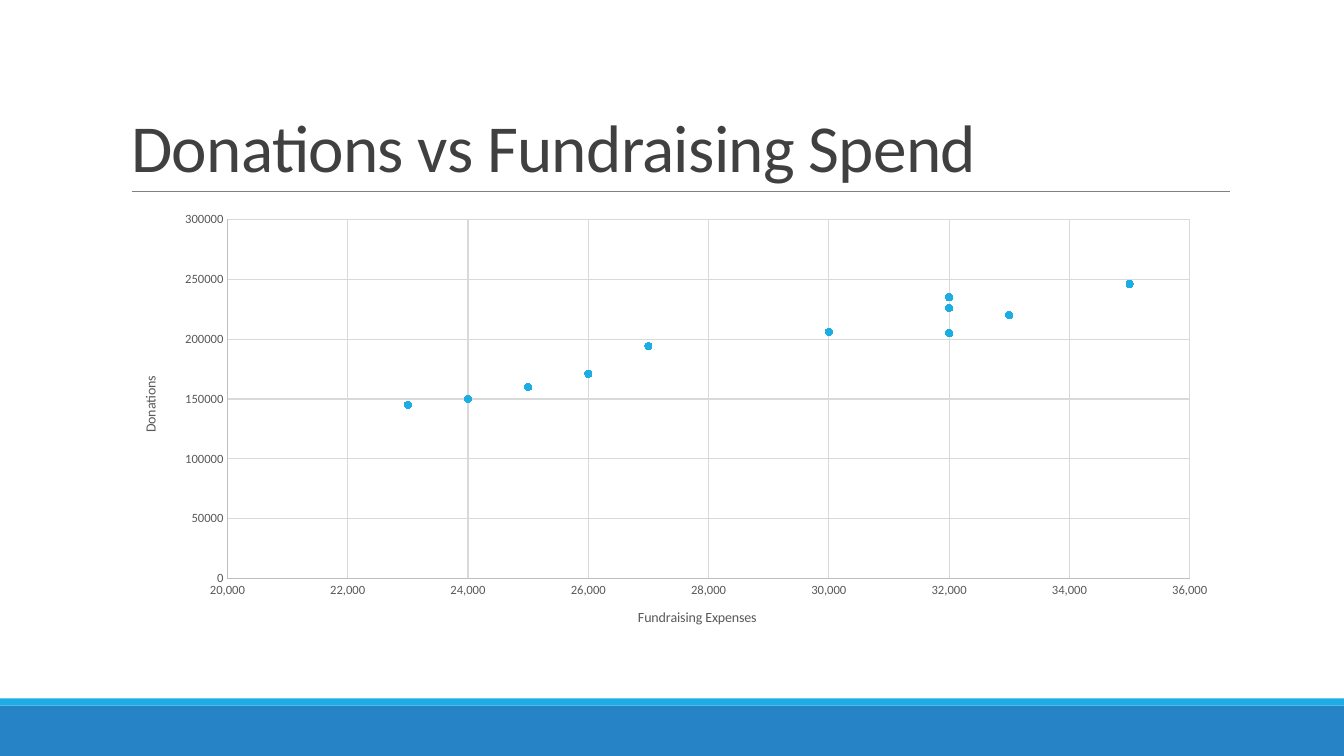
from lxml import etree
from pptx import Presentation
from pptx import util as u
from pptx.chart import data
from pptx.dml.color import RGBColor
from pptx.enum import chart as ch, shapes, text
from pptx.oxml import parse_xml
from pptx.oxml.ns import nsdecls, qn

COLORS = {
    "band": "2683C6", "accent": "1CADE4", "rule": "808080", "title": "404040",
    "label": "595959", "axis": "BFBFBF", "grid": "D9D9D9",
}
FONT = "Calibri"
SPEND_AND_DONATIONS = [
    (33000, 220000), (25000, 160000), (30000, 206000), (23000, 145000),
    (35000, 246000), (24000, 150000), (32000, 226000), (26000, 171000),
    (32000, 235000), (32000, 205000), (27000, 194000),
]


def color(name):
    return RGBColor.from_string(COLORS[name])


def style_font(font, size, tint):
    font.name, font.size, font.bold = FONT, u.Pt(size), False
    font.color.rgb = color(tint)


def write(frame, words, size, tint, leading=None, tracking=None):
    paragraph = frame.paragraphs[0]
    if leading:
        paragraph.line_spacing = leading
    run = paragraph.add_run()
    run.text = words
    style_font(run.font, size, tint)
    if tracking:
        run.font._element.set("spc", str(tracking))


def percent_layout(**percents):
    inner = '<c:layoutTarget val="inner"/>' if "w" in percents else ""
    modes = "".join(f'<c:{key}Mode val="edge"/>' for key in ("x", "y"))
    values = "".join(f'<c:{key} val="{value / 100:.4f}"/>' for key, value in percents.items())
    return parse_xml(f'<c:layout {nsdecls("c")}><c:manualLayout>'
                     f'{inner}{modes}{values}</c:manualLayout></c:layout>')


def drop_layout(element):
    for layout in element.findall(qn("c:layout")):
        element.remove(layout)


class SlideBuilder:
    def __init__(self, slide):
        self.slide = slide

    def band(self, left, top, width, height, tint):
        bar = self.slide.shapes.add_shape(
            shapes.MSO_SHAPE.RECTANGLE, u.Cm(left), u.Cm(top), u.Cm(width), u.Cm(height))
        bar.shadow.inherit = False
        bar.fill.solid()
        bar.fill.fore_color.rgb = color(tint)
        bar.line.fill.background()

    def rule(self, left, right, top):
        line = self.slide.shapes.add_connector(
            shapes.MSO_CONNECTOR.STRAIGHT, u.Cm(left), u.Cm(top), u.Cm(right), u.Cm(top))
        line.line.color.rgb = color("rule")
        line.line.width = u.Pt(0.5)
        etree.SubElement(line._element.spPr, qn("a:effectLst"))

    def title(self, words, left, top, width, height):
        box = self.slide.shapes.add_textbox(u.Cm(left), u.Cm(top), u.Cm(width), u.Cm(height))
        box.text_frame.word_wrap = True
        box.text_frame.vertical_anchor = text.MSO_ANCHOR.BOTTOM
        write(box.text_frame, words, 48, "title", leading=0.85, tracking=-50)

    def axis(self, axis, words, low, high, step, number_format, x, y):
        axis.minimum_scale, axis.maximum_scale, axis.major_unit = low, high, step
        axis.has_major_gridlines = True
        axis.major_tick_mark = axis.minor_tick_mark = ch.XL_TICK_MARK.NONE
        style_font(axis.tick_labels.font, 9, "label")
        axis.tick_labels.number_format = number_format
        axis.tick_labels.number_format_is_linked = False
        for line, tint in ((axis.format.line, "axis"),
                           (axis.major_gridlines.format.line, "grid")):
            line.color.rgb = color(tint)
            line.width = u.Pt(0.75)
        write(axis.axis_title.text_frame, words, 10, "label")
        title = axis.axis_title._element
        drop_layout(title)
        title.find(qn("c:tx")).addnext(percent_layout(x=x, y=y))

    def scatter(self, points, left, top, width, height):
        chart_data = data.XyChartData()
        donations = chart_data.add_series("Series 1")
        for spend, amount in points:
            donations.add_data_point(spend, amount)
        chart = self.slide.shapes.add_chart(
            ch.XL_CHART_TYPE.XY_SCATTER, u.Cm(left), u.Cm(top), u.Cm(width), u.Cm(height),
            chart_data).chart
        chart.has_legend = chart.has_title = False
        style_font(chart.font, 10, "label")
        plot = chart.plots[0]
        plot.vary_by_categories = False
        series = plot.series[0]
        series.smooth = False
        series.format.line.fill.background()
        series.marker.style, series.marker.size = ch.XL_MARKER_STYLE.CIRCLE, 5
        series.marker.format.fill.solid()
        series.marker.format.fill.fore_color.rgb = color("accent")
        series.marker.format.line.color.rgb = color("accent")
        self.axis(chart.category_axis, "Fundraising Expenses",
                  20000, 36000, 2000, "#,##0", 46.4, 90.7)
        self.axis(chart.value_axis, "Donations", 0, 300000, 50000, "General", 1.6, 38.3)
        area = chart._chartSpace.chart.plotArea
        drop_layout(area)
        area.insert(0, percent_layout(x=9.6, y=3.6, w=86.8, h=80.95))


def main():
    deck = Presentation()
    deck.slide_width, deck.slide_height = u.Cm(33.87), u.Cm(19.05)
    page = SlideBuilder(deck.slides.add_slide(deck.slide_layouts[6]))
    page.band(0, 17.78, 33.87, 1.27, "band")
    page.band(0, 17.6, 33.87, 0.18, "accent")
    page.rule(3.32, 31.0, 4.83)
    page.title("Donations vs Fundraising Spend", 3.06, 0.8, 27.94, 4.03)
    page.scatter(SPEND_AND_DONATIONS, 3.05, 5.13, 27.94, 11.18)
    deck.save("out.pptx")


if __name__ == "__main__":
    main()
